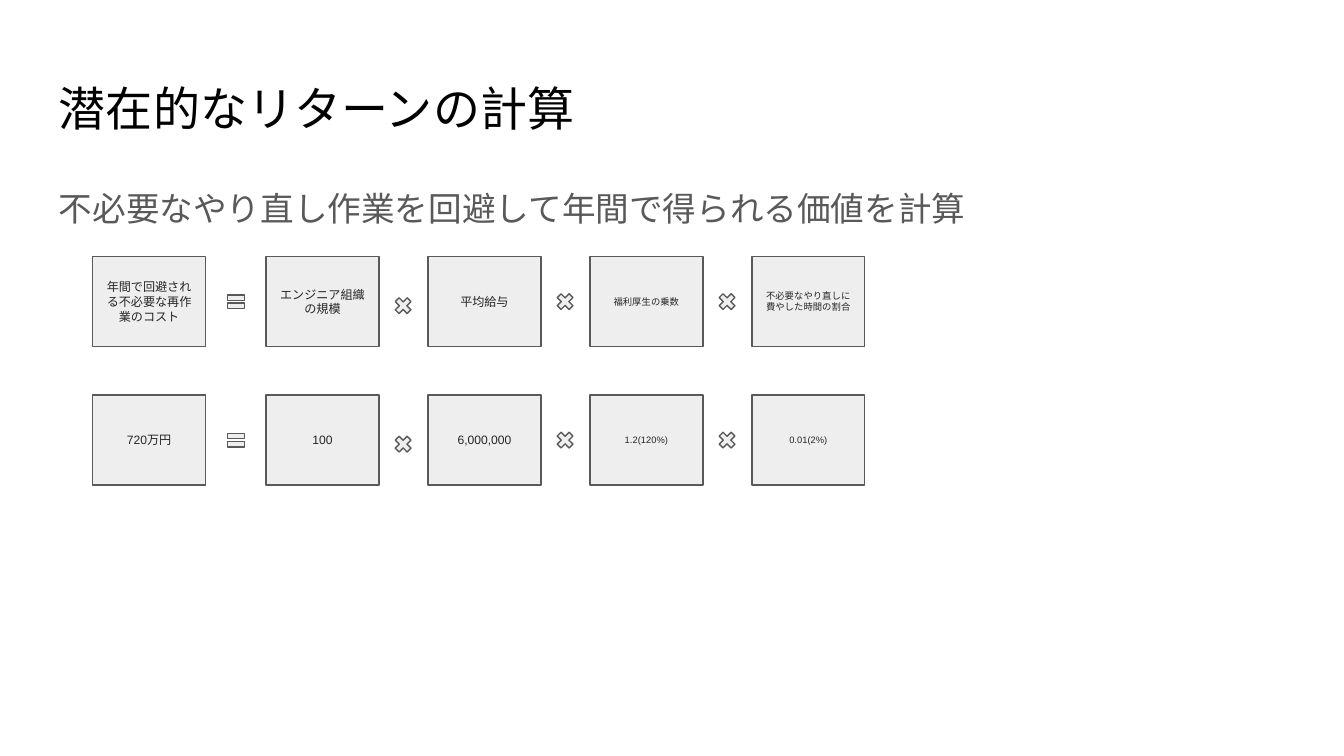
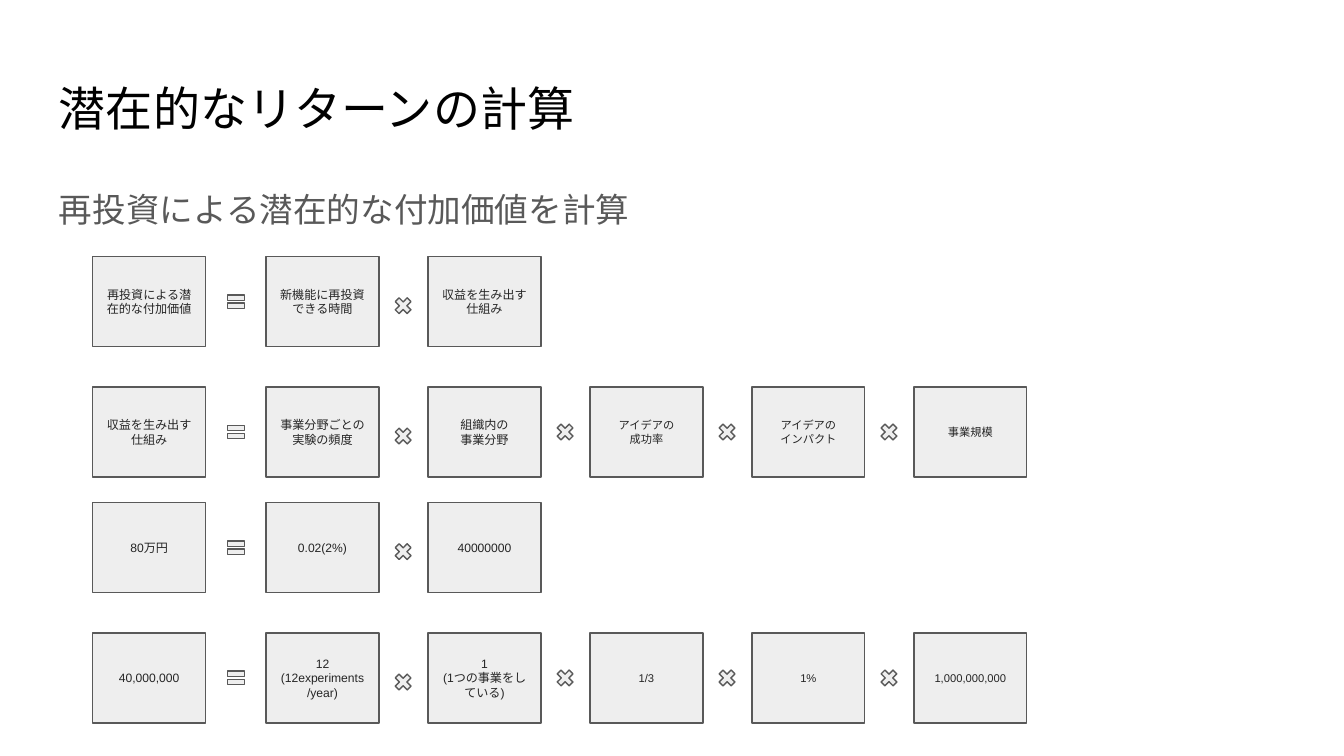
from lxml.etree import SubElement
from pptx import Presentation
from pptx.dml.color import RGBColor
from pptx.enum.shapes import MSO_SHAPE as Preset
from pptx.enum.text import MSO_ANCHOR as Anchor, PP_ALIGN as Align
from pptx.oxml.ns import qn
from pptx.util import Inches, Pt

FONT = "Arial"
BLACK, GREY, DARK, PALE = "000000", "595959", "252525", "EEEEEE"
TITLE = "潜在的なリターンの計算"

SLIDE_WIDTH = 10
SLIDE_HEIGHT = SLIDE_WIDTH * 9 / 16
MARGIN, TEXT_WIDTH = 0.34, 9.32
BOX_WIDTH, BOX_HEIGHT = 0.84, 0.67
RESULT_LEFT, FACTORS_LEFT = 0.69, 1.98
FACTOR_STEP = (6.8 - FACTORS_LEFT) / 4
SIGN_SIZE = 0.17
MAIN_SIZE, MAIN_TERMS = 6.5, 3  # terms after the main ones use smaller text

SLIDES = [
    {
        "subtitle": "不必要なやり直し作業を回避して年間で得られる価値を計算",
        "subtitle_top": 1.25,
        "small_size": 5,
        "formulas": [
            (1.91, ["年間で回避される不必要な再作業のコスト", "エンジニア組織の規模",
                    "平均給与", "福利厚生の乗数", "不必要なやり直しに費やした時間の割合"]),
            (2.94, ["720万円", "100", "6,000,000", "1.2(120%)", "0.01(2%)"]),
        ],
    },
    {
        "subtitle": "再投資による潜在的な付加価値を計算",
        "subtitle_top": 1.26,
        "small_size": 6,
        "formulas": [
            (1.91, ["再投資による潜在的な付加価値", "新機能に再投資できる時間",
                    "収益を生み出す仕組み"]),
            (2.88, ["収益を生み出す仕組み", "事業分野ごとの実験の頻度",
                    "組織内の\n事業分野", "アイデアの\n成功率",
                    "アイデアの\nインパクト", "事業規模"]),
            (3.74, ["80万円", "0.02(2%)", "40000000"]),
            (4.71, ["40,000,000", "12\n(12experiments/year)",
                    "1\n(1つの事業をしている)", "1/3", "1%", "1,000,000,000"]),
        ],
    },
]


def color(value):
    return RGBColor.from_string(value)


def write(shape, text, size, fill, align=Align.LEFT, anchor=Anchor.TOP, spacing=None):
    """Fill a shape with text, one paragraph per line."""
    frame = shape.text_frame
    frame.word_wrap = True
    frame.vertical_anchor = anchor
    frame.margin_left = frame.margin_right = Inches(0.1)
    frame.margin_top = frame.margin_bottom = Inches(0.1)
    for index, line in enumerate(text.split("\n")):
        paragraph = frame.add_paragraph() if index else frame.paragraphs[0]
        paragraph.alignment = align
        if spacing:
            paragraph.line_spacing = spacing
        run = paragraph.add_run()
        run.text = line
        run.font.size = Pt(size)
        run.font.name = FONT
        run.font.color.rgb = color(fill)
        # East Asian characters take their font from a separate element
        SubElement(run.font._element, qn("a:ea"), typeface=FONT)


def add_text(slide, text, top, height, **text_format):
    box = slide.shapes.add_textbox(
        Inches(MARGIN), Inches(top), Inches(TEXT_WIDTH), Inches(height))
    write(box, text, **text_format)


def add_outlined(slide, preset, left, top, width, height):
    shape = slide.shapes.add_shape(
        preset, Inches(left), Inches(top), Inches(width), Inches(height))
    shape.shadow.inherit = False
    shape.fill.solid()
    shape.fill.fore_color.rgb = color(PALE)
    shape.line.color.rgb = color(GREY)
    shape.line.width = Pt(0.75)
    return shape


def add_sign(slide, position, left, top):
    """Place the sign in front of the term whose box starts at left, top."""
    preset = Preset.MATH_EQUAL if position == 1 else Preset.MATH_MULTIPLY
    gap = 0.31 if position == 1 else 0.27
    drop = 0.28 if position == 2 else 0.25
    add_outlined(slide, preset, left - gap, top + drop, SIGN_SIZE, SIGN_SIZE)


def add_formula(slide, top, terms, small_size):
    """Draw one row: result = factor × factor × ..."""
    for position, term in enumerate(terms):
        left = RESULT_LEFT
        if position:
            left = FACTORS_LEFT + (position - 1) * FACTOR_STEP
            add_sign(slide, position, left, top)
        box = add_outlined(slide, Preset.RECTANGLE, left, top, BOX_WIDTH, BOX_HEIGHT)
        size = MAIN_SIZE if position < MAIN_TERMS else small_size
        write(box, term, size, DARK, align=Align.CENTER, anchor=Anchor.MIDDLE)


def add_formula_slide(presentation, subtitle, subtitle_top, small_size, formulas):
    slide = presentation.slides.add_slide(presentation.slide_layouts[6])
    add_text(slide, TITLE, 0.49, 0.63, size=25.2, fill=BLACK)
    add_text(slide, subtitle, subtitle_top, 3.74, size=18, fill=GREY, spacing=1.15)
    for top, terms in formulas:
        add_formula(slide, top, terms, small_size)


def main():
    presentation = Presentation()
    presentation.slide_width = Inches(SLIDE_WIDTH)
    presentation.slide_height = Inches(SLIDE_HEIGHT)
    for content in SLIDES:
        add_formula_slide(presentation, **content)
    presentation.save("out.pptx")


if __name__ == "__main__":
    main()
